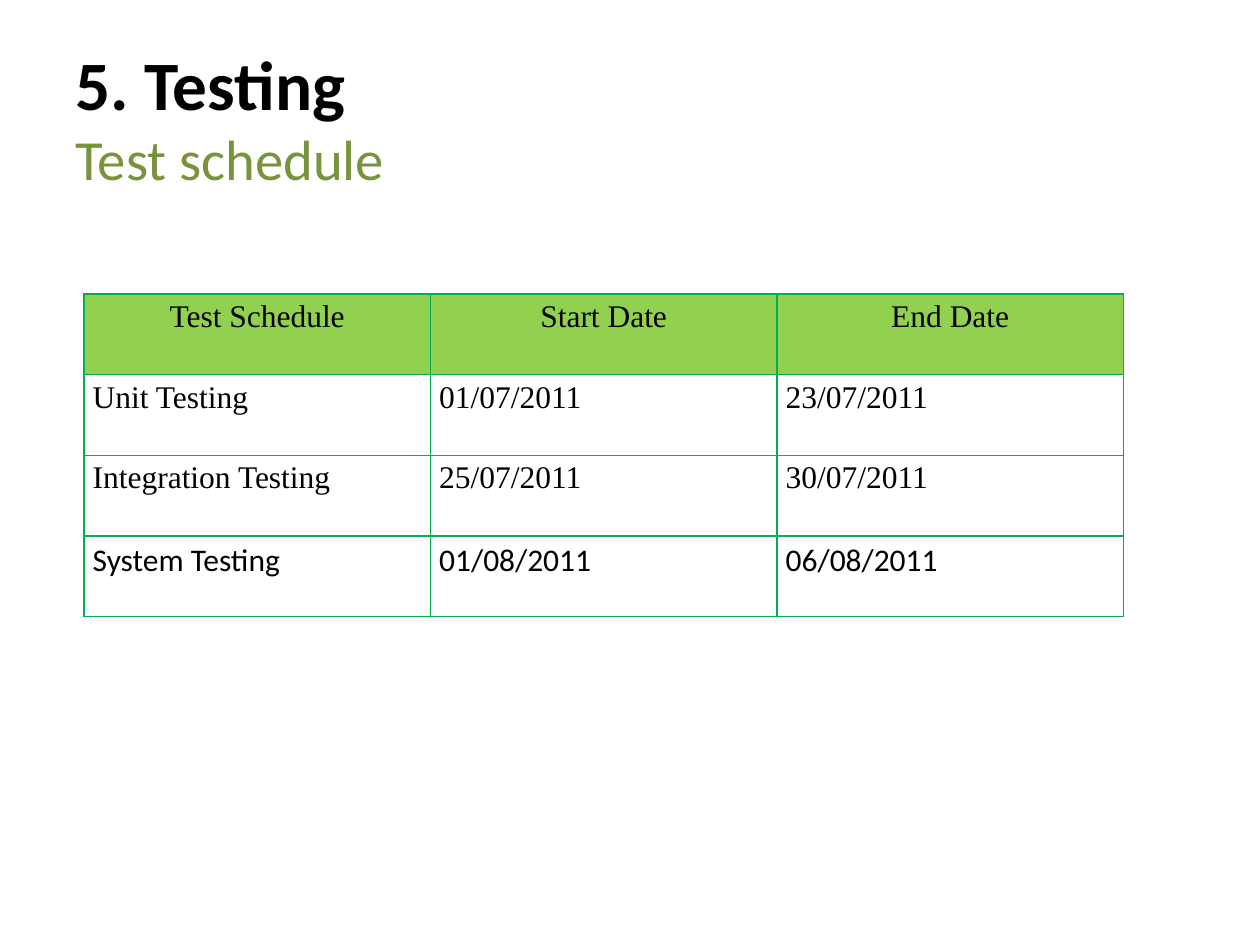
from lxml import etree
from pptx import Presentation
from pptx.dml.color import RGBColor
from pptx.enum.text import MSO_ANCHOR, PP_ALIGN
from pptx.oxml.ns import qn
from pptx.util import Pt

CENTER, LEFT = PP_ALIGN.CENTER, PP_ALIGN.LEFT
MIDDLE, TOP = MSO_ANCHOR.MIDDLE, MSO_ANCHOR.TOP

BLACK = RGBColor(0x00, 0x00, 0x00)
OLIVE = RGBColor(0x77, 0x93, 0x3C)
HEADER_GREEN = RGBColor(0x92, 0xD0, 0x50)
BORDER_GREEN = RGBColor(0x00, 0xB0, 0x50)

SANS, SERIF = "Calibri", "Times New Roman"

SCHEDULE = [
    ("Test Schedule", "Start Date", "End Date"),
    ("Unit Testing", "01/07/2011", "23/07/2011"),
    ("Integration Testing", "25/07/2011", "30/07/2011"),
    ("System Testing", "01/08/2011", "06/08/2011"),
]
ROW_FONTS = [SERIF, SERIF, SERIF, SANS]


class SlideBuilder:
    cell_size = 18
    cell_spacing = 1.15
    cell_inset = 5
    border_width = 1

    def __init__(self, slide):
        self.slide = slide

    def run(self, paragraph, text, size, font, color=BLACK, bold=False):
        run = paragraph.add_run()
        run.text = text
        run.font.size = Pt(size)
        run.font.name = font
        run.font.bold = bold
        run.font.color.rgb = color

    def heading(self, left, top, width, height, title, subtitle):
        box = self.slide.shapes.add_textbox(Pt(left), Pt(top), Pt(width), Pt(height))
        frame = box.text_frame
        frame.word_wrap = True
        frame.vertical_anchor = MIDDLE
        paragraph = frame.paragraphs[0]
        self.run(paragraph, title, 39.6, SANS, bold=True)
        paragraph.add_line_break()
        self.run(paragraph, subtitle, 32.4, SANS, OLIVE)

    def borders(self, cell):
        """Draw all four cell edges; call before the fill, which must follow them in XML."""
        properties = cell._tc.get_or_add_tcPr()
        for edge in ("a:lnL", "a:lnR", "a:lnT", "a:lnB"):
            line = etree.SubElement(properties, qn(edge), w=str(Pt(self.border_width)))
            fill = etree.SubElement(line, qn("a:solidFill"))
            etree.SubElement(fill, qn("a:srgbClr"), val=str(BORDER_GREEN))

    def cell(self, cell, text, font, is_header):
        cell.margin_left = cell.margin_right = Pt(self.cell_inset)
        cell.margin_top = cell.margin_bottom = Pt(0)
        cell.vertical_anchor = TOP
        self.borders(cell)
        if is_header:
            cell.fill.solid()
            cell.fill.fore_color.rgb = HEADER_GREEN
        else:
            cell.fill.background()
        paragraph = cell.text_frame.paragraphs[0]
        paragraph.alignment = CENTER if is_header else LEFT
        paragraph.line_spacing = self.cell_spacing
        self.run(paragraph, text, self.cell_size, font)

    def table(self, left, top, column_width, row_height, rows, fonts):
        row_count, column_count = len(rows), len(rows[0])
        table = self.slide.shapes.add_table(
            row_count, column_count, Pt(left), Pt(top),
            Pt(column_width * column_count), Pt(row_height * row_count)).table
        for column in table.columns:
            column.width = Pt(column_width)
        for r, (texts, font) in enumerate(zip(rows, fonts)):
            table.rows[r].height = Pt(row_height)
            for c, text in enumerate(texts):
                self.cell(table.cell(r, c), text, font, is_header=r == 0)


def main():
    deck = Presentation()
    deck.slide_width, deck.slide_height = Pt(720), Pt(540)
    builder = SlideBuilder(deck.slides.add_slide(deck.slide_layouts[6]))
    builder.heading(36, 21.6, 648, 90, "5. Testing", "Test schedule")
    builder.table(48, 168, 198, 46.1, SCHEDULE, ROW_FONTS)
    deck.save("out.pptx")


if __name__ == "__main__":
    main()
